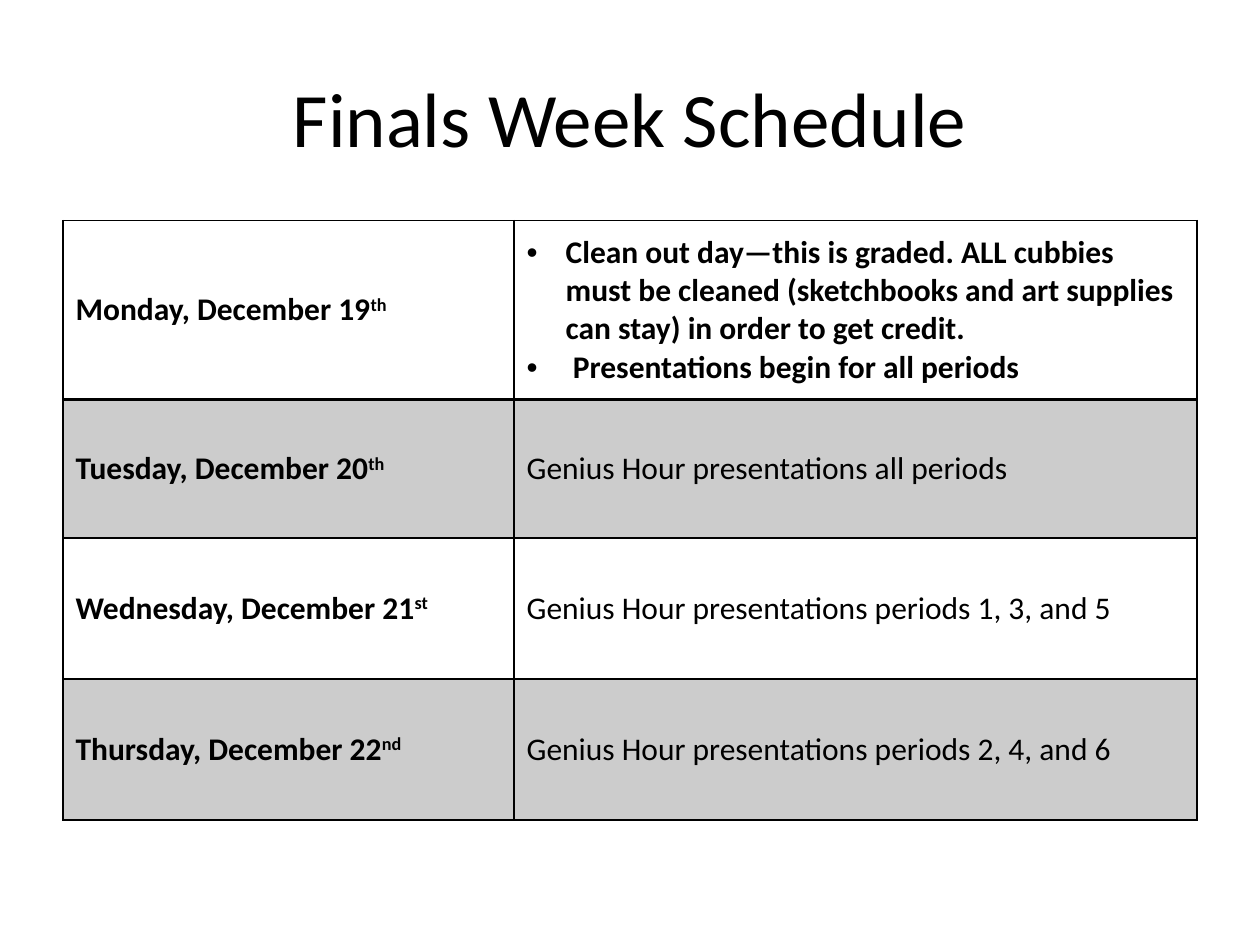
from lxml import etree
from pptx import Presentation
from pptx.dml.color import RGBColor
from pptx.enum.text import MSO_ANCHOR, PP_ALIGN
from pptx.oxml.ns import qn
from pptx.util import Inches, Pt

MIDDLE = MSO_ANCHOR.MIDDLE
CENTER = PP_ALIGN.CENTER

COLORS = {"ink": "000000"}
TITLE_FONT = {"name": "Calibri", "size": Pt(44), "bold": False}
BODY_FONT = {"name": "Calibri", "size": Pt(18), "bold": False}
BOLD_FONT = {**BODY_FONT, "bold": True}

COLUMN_WIDTHS = [3.58, 5.42]
ROW_HEIGHTS = [1.42, 1.1, 1.12, 1.12]
BULLET_INDENT = Inches(0.31)
SHADE_PERCENT = 20

# Day, ordinal suffix, activities
SCHEDULE = [
    ("Monday, December 19", "th", [
        "Clean out day—this is graded. ALL cubbies must be cleaned "
        "(sketchbooks and art supplies can stay) in order to get credit.",
        " Presentations begin for all periods",
    ]),
    ("Tuesday, December 20", "th", ["Genius Hour presentations all periods"]),
    ("Wednesday, December 21", "st", ["Genius Hour presentations periods 1, 3, and 5"]),
    ("Thursday, December 22", "nd", ["Genius Hour presentations periods 2, 4, and 6"]),
]


def add_run(paragraph, text, font_format):
    run = paragraph.add_run()
    run.text = text
    for name, value in font_format.items():
        setattr(run.font, name, value)
    run.font.color.rgb = RGBColor.from_string(COLORS["ink"])
    return run


def add_solid_fill(parent, color):
    fill = etree.SubElement(parent, qn("a:solidFill"))
    return etree.SubElement(fill, qn("a:srgbClr"), val=color)


def set_borders(cell, widths):
    properties = cell._tc.get_or_add_tcPr()
    for side in "LRTB":
        line = etree.SubElement(properties, qn(f"a:ln{side}"), w=str(Pt(widths[side])))
        add_solid_fill(line, COLORS["ink"])


def set_fill(cell, shaded):
    if shaded:
        color = add_solid_fill(cell._tc.get_or_add_tcPr(), COLORS["ink"])
        etree.SubElement(color, qn("a:alpha"), val=str(SHADE_PERCENT * 1000))
    else:
        cell.fill.background()


def set_bullet(paragraph):
    properties = paragraph._p.get_or_add_pPr()
    properties.set("marL", str(BULLET_INDENT))
    properties.set("indent", str(-BULLET_INDENT))
    etree.SubElement(properties, qn("a:buFont"), typeface="Arial")
    etree.SubElement(properties, qn("a:buChar"), char="•")


def write_day(cell, day, suffix):
    paragraph = cell.text_frame.paragraphs[0]
    add_run(paragraph, day, BOLD_FONT)
    ordinal = add_run(paragraph, suffix, BOLD_FONT)
    ordinal.font._element.set("baseline", "30000")


def write_activities(cell, activities, font_format):
    frame = cell.text_frame
    for index, activity in enumerate(activities):
        paragraph = frame.add_paragraph() if index else frame.paragraphs[0]
        if len(activities) > 1:
            set_bullet(paragraph)
        add_run(paragraph, activity, font_format)


def add_title(slide, left, top, width, height):
    box = slide.shapes.add_textbox(Inches(left), Inches(top), Inches(width), Inches(height))
    frame = box.text_frame
    frame.word_wrap = True
    frame.vertical_anchor = MIDDLE
    paragraph = frame.paragraphs[0]
    paragraph.alignment = CENTER
    add_run(paragraph, "Finals Week Schedule", TITLE_FONT)


def add_schedule(slide, left, top, width, height):
    table = slide.shapes.add_table(
        len(SCHEDULE), len(COLUMN_WIDTHS),
        Inches(left), Inches(top), Inches(width), Inches(height),
    ).table
    table.first_row = False
    table.horz_banding = False
    for column, column_width in zip(table.columns, COLUMN_WIDTHS):
        column.width = Inches(column_width)

    for index, (day, suffix, activities) in enumerate(SCHEDULE):
        row = table.rows[index]
        row.height = Inches(ROW_HEIGHTS[index])
        day_cell, activity_cell = row.cells
        write_day(day_cell, day, suffix)
        write_activities(activity_cell, activities, BODY_FONT if index else BOLD_FONT)

        # A heavier rule separates the first day from the rest
        widths = {"L": 1, "R": 1, "T": 2 if index == 1 else 1, "B": 1 if index else 2}
        for cell in (day_cell, activity_cell):
            cell.vertical_anchor = MIDDLE
            set_borders(cell, widths)
            set_fill(cell, shaded=index % 2 == 1)


def main():
    presentation = Presentation()
    presentation.slide_width = Inches(10)
    presentation.slide_height = Inches(7.5)
    slide = presentation.slides.add_slide(presentation.slide_layouts[6])
    add_title(slide, 0.5, 0.3, 9, 1.25)
    add_schedule(slide, 0.5, 1.75, sum(COLUMN_WIDTHS), sum(ROW_HEIGHTS))
    presentation.save("out.pptx")


if __name__ == "__main__":
    main()
